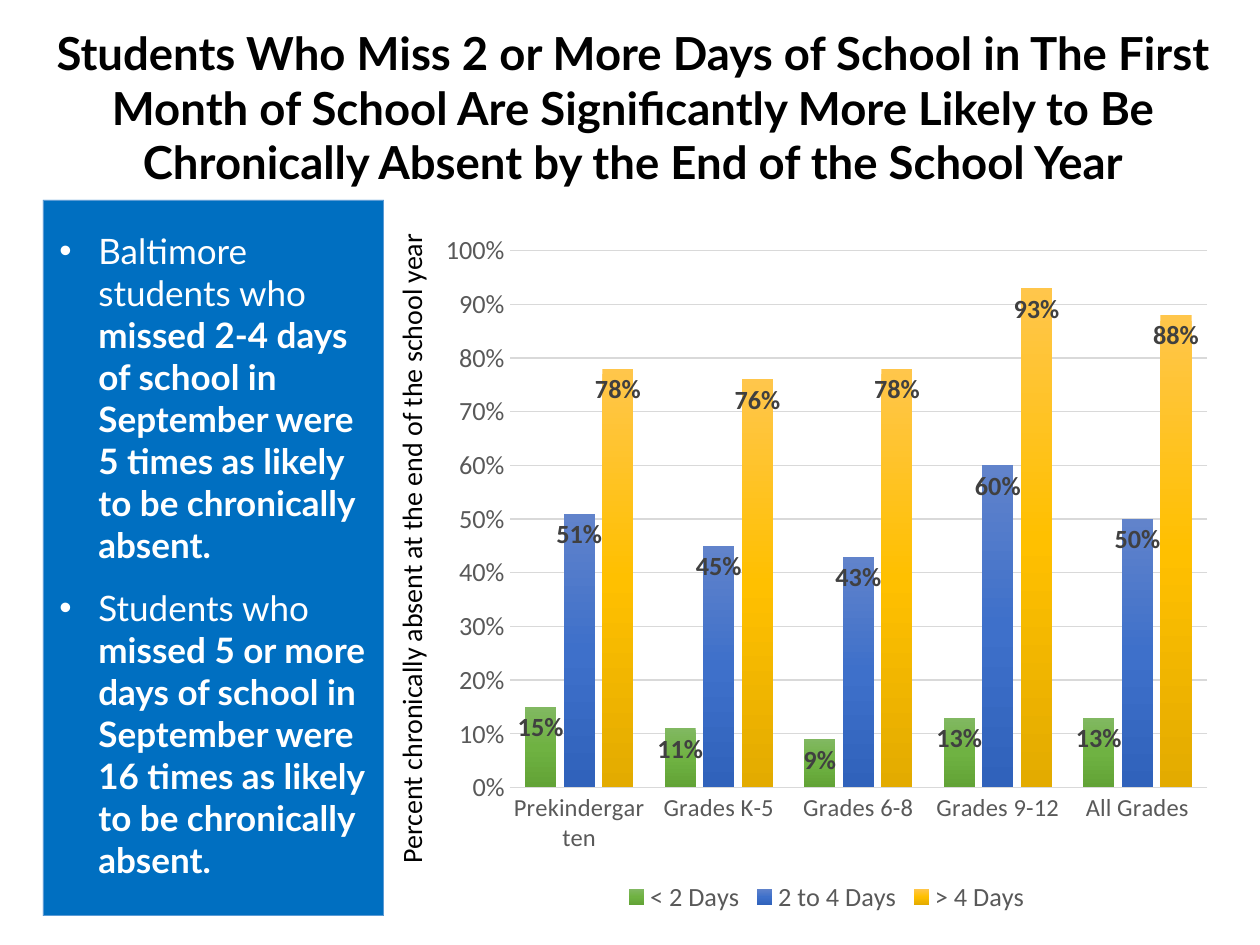
import copy
from dataclasses import dataclass

import pptx
import pptx.chart.data
import pptx.dml.color
import pptx.enum.chart
import pptx.enum.shapes
import pptx.enum.text
import pptx.oxml.ns
import pptx.util
from lxml import etree

PX = 914400 / 126
qn = pptx.oxml.ns.qn


@dataclass(frozen=True)
class Theme:
    heading_font: str = "Lato"
    chart_font: str = "Calibri"
    black: str = "000000"
    white: str = "FFFFFF"
    panel: str = "006FC1"
    panel_line: str = "5B9BD5"
    axis_text: str = "595959"
    label_text: str = "404040"
    grid: str = "D9D9D9"
    gradients: tuple = (
        ("81B861", "6FB242", "62A336"),
        ("6183CB", "3E70CA", "3062BB"),
        ("FFC64B", "FFC000", "E3AB00"),
    )
    title_size: int = 26
    bullet_size: int = 20
    caption_size: int = 16
    chart_size: int = 15
    category_size: int = 14


def px(*lengths):
    return [pptx.util.Emu(round(length * PX)) for length in lengths]


def rgb(value):
    return pptx.dml.color.RGBColor.from_string(value)


def set_font(font, name, size, color, bold=None):
    font.name = name
    font.size = pptx.util.Pt(size)
    font.color.rgb = rgb(color)
    font.bold = bold


class SlideBuilder:
    def __init__(self, deck, theme):
        self.theme = theme
        self.page = deck.slides.add_slide(deck.slide_layouts[6])

    def text_box(self, area):
        frame = self.page.shapes.add_textbox(*px(*area)).text_frame
        frame.word_wrap = True
        return frame

    def line(self, area, text, font, size, bold=None, vertical=False):
        frame = self.text_box(area)
        if vertical:
            frame._txBody.bodyPr.set("vert", "vert270")
        para = frame.paragraphs[0]
        para.text = text
        para.alignment = pptx.enum.text.PP_ALIGN.CENTER
        set_font(para.font, font, size, self.theme.black, bold)

    def panel(self, area):
        box = self.page.shapes.add_shape(pptx.enum.shapes.MSO_SHAPE.RECTANGLE, *px(*area))
        box.shadow.inherit = False
        box.fill.solid()
        box.fill.fore_color.rgb = rgb(self.theme.panel)
        box.line.color.rgb = rgb(self.theme.panel_line)
        box.line.width = pptx.util.Pt(0.5)

    def bullets(self, area, items):
        frame = self.text_box(area)
        indent = px(39)[0]
        for index, (lead, emphasis) in enumerate(items):
            para = frame.add_paragraph() if index else frame.paragraphs[0]
            properties = para._p.get_or_add_pPr()
            properties.set("marL", str(indent))
            properties.set("indent", str(-indent))
            para.space_after = pptx.util.Pt(12)
            etree.SubElement(properties, qn("a:buFont"), typeface="Arial")
            etree.SubElement(properties, qn("a:buChar"), char="•")
            set_font(para.font, self.theme.heading_font, self.theme.bullet_size, self.theme.white)
            para.add_run().text = lead
            span = para.add_run()
            span.text = emphasis
            span.font.bold = True

    def gradient(self, series, colors):
        fill = series.format.fill
        fill.gradient()
        fill.gradient_angle = 270  # counter-clockwise, so top to bottom
        stops = next(series._element.iter(qn("a:gsLst")))
        stops.insert(1, copy.deepcopy(stops[0]))
        for index, (stop, color) in enumerate(zip(fill.gradient_stops, colors)):
            stop.position = index / (len(colors) - 1)
            stop.color.rgb = rgb(color)

    def column_chart(self, area, categories, groups):
        theme, kinds = self.theme, pptx.enum.chart
        data = pptx.chart.data.CategoryChartData(number_format="0%")
        data.categories = categories
        for name, values in groups.items():
            data.add_series(name, values)
        chart = self.page.shapes.add_chart(
            kinds.XL_CHART_TYPE.COLUMN_CLUSTERED, *px(*area), data).chart
        set_font(chart.font, theme.chart_font, theme.chart_size, theme.axis_text)
        chart.has_title = False

        # Legend
        chart.has_legend = True
        chart.legend.position = kinds.XL_LEGEND_POSITION.BOTTOM
        chart.legend.include_in_layout = False
        set_font(chart.legend.font, theme.chart_font, theme.chart_size, theme.axis_text)

        # Axes
        sizes = (theme.category_size, theme.chart_size)
        for axis, size in zip((chart.category_axis, chart.value_axis), sizes):
            axis.major_tick_mark = axis.minor_tick_mark = kinds.XL_TICK_MARK.NONE
            set_font(axis.tick_labels.font, theme.chart_font, size, theme.axis_text)
        baseline = chart.category_axis.format.line
        baseline.color.rgb = rgb(theme.grid)
        baseline.width = pptx.util.Pt(1)
        scale = chart.value_axis
        scale.minimum_scale, scale.maximum_scale, scale.major_unit = 0, 1, 0.1
        scale.tick_labels.number_format = "0%"
        scale.tick_labels.number_format_is_linked = False
        scale.format.line.fill.background()
        grid = scale.major_gridlines.format.line
        grid.color.rgb = rgb(theme.grid)
        grid.width = pptx.util.Pt(0.75)

        # Columns and their labels
        plot = chart.plots[0]
        plot.vary_by_categories = False
        plot.gap_width, plot.overlap = 100, -24
        for series, colors in zip(plot.series, theme.gradients):
            self.gradient(series, colors)
            labels = series.data_labels
            labels.show_value = True
            labels.position = kinds.XL_LABEL_POSITION.INSIDE_END
            labels.number_format = "0%"
            labels.number_format_is_linked = False
            set_font(labels.font, theme.chart_font, theme.chart_size, theme.label_text, True)


def main():
    deck = pptx.Presentation()
    deck.slide_width, deck.slide_height = px(1260, 945)
    theme = Theme()
    slide = SlideBuilder(deck, theme)

    # Title
    slide.line((19, 19, 1229, 178),
               "Students Who Miss 2 or More Days of School in The First Month of School "
               "Are Significantly More Likely to Be Chronically Absent by the End of the "
               "School Year", theme.heading_font, theme.title_size, bold=True)

    # Chart with its vertical caption
    slide.line((388, 200, 59, 697),
               "Percent chronically absent at the end of the school year",
               theme.chart_font, theme.caption_size, vertical=True)
    slide.column_chart(
        (430, 221, 793, 697),
        ["Prekindergarten", "Grades K-5", "Grades 6-8", "Grades 9-12", "All Grades"],
        {"< 2 Days": (0.15, 0.11, 0.09, 0.13, 0.13),
         "2 to 4 Days": (0.51, 0.45, 0.43, 0.6, 0.5),
         "> 4 Days": (0.78, 0.76, 0.78, 0.93, 0.88)})

    # Findings panel
    slide.panel((43, 200, 341, 716))
    slide.bullets((47, 223, 333, 670), [
        ("Baltimore students who ",
         "missed 2-4 days of school in September were 5 times as likely to be "
         "chronically absent."),
        ("Students who ",
         "missed 5 or more days of school in September were 16 times as likely to be "
         "chronically absent."),
    ])
    deck.save("out.pptx")


if __name__ == "__main__":
    main()
